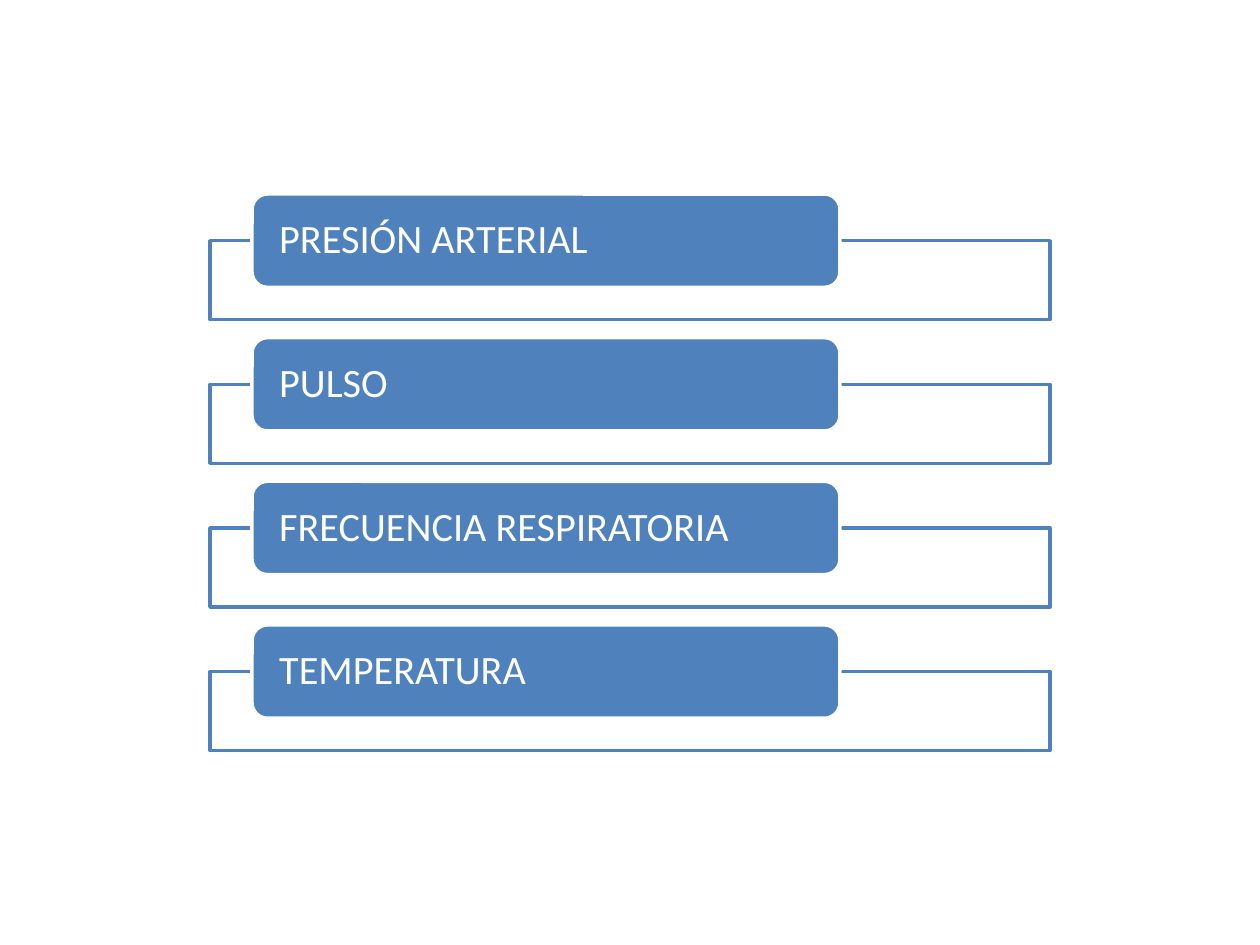
import pptx
import pptx.util
import pptx.dml.color
import pptx.enum.shapes
import pptx.enum.text
import pptx.oxml.ns
import lxml.etree

COLORS = {"blue": "4F81BD", "white": "FFFFFF"}
SIGNS = ["PRESIÓN ARTERIAL", "PULSO", "FRECUENCIA RESPIRATORIA", "TEMPERATURA"]
SHAPE = pptx.enum.shapes.MSO_SHAPE


def rgb(name):
    return pptx.dml.color.RGBColor.from_string(COLORS[name])


class SlideBuilder:
    """Style and current slide; lengths are columns and rows of a grid."""
    col = 10 / 30
    row = 1.14
    top = 1.54
    font = "Calibri"
    font_size = 23
    line_width = 2

    def __init__(self, s):
        self.s = s

    def shape(self, kind, x, y, w, h, fill, line):
        sp = self.s.shapes.add_shape(
            kind,
            pptx.util.Inches(x * self.col), pptx.util.Inches(self.top + y * self.row),
            pptx.util.Inches(w * self.col), pptx.util.Inches(h * self.row))
        sp.shadow.inherit = False
        sp.fill.solid()
        sp.fill.fore_color.rgb = rgb(fill)
        sp.line.color.rgb = rgb(line)
        sp.line.width = pptx.util.Pt(self.line_width)
        return sp

    def frame(self, x, y, w, h, opacity=90):
        sp = self.shape(SHAPE.RECTANGLE, x, y, w, h, "white", "blue")
        color = sp.fill._xPr.find(".//" + pptx.oxml.ns.qn("a:srgbClr"))
        lxml.etree.SubElement(color, pptx.oxml.ns.qn("a:alpha"), val=str(opacity * 1000))

    def label(self, text, x, y, w, h):
        sp = self.shape(SHAPE.ROUNDED_RECTANGLE, x, y, w, h, "blue", "white")
        tf = sp.text_frame
        tf.word_wrap = True
        tf.vertical_anchor = pptx.enum.text.MSO_ANCHOR.MIDDLE
        tf.margin_left = tf.margin_right = pptx.util.Inches(0.18)
        tf.margin_top = tf.margin_bottom = 0
        tf.text = text
        p = tf.paragraphs[0]
        p.alignment = pptx.enum.text.PP_ALIGN.LEFT
        p.line_spacing = 0.9
        r = p.runs[0]
        r.font.name = self.font
        r.font.size = pptx.util.Pt(self.font_size)
        r.font.color.rgb = rgb("white")


def main():
    prs = pptx.Presentation()
    prs.slide_width = pptx.util.Inches(10)
    prs.slide_height = pptx.util.Inches(7.5)
    b = SlideBuilder(prs.slides.add_slide(prs.slide_layouts[6]))

    # One vital sign per row: the frame starts at the middle of its label
    label_height = 0.65
    for i, sign in enumerate(SIGNS):
        b.frame(5, i + label_height / 2, 20, 0.55)
        b.label(sign, 6, i, 14, label_height)

    prs.save("out.pptx")


if __name__ == "__main__":
    main()
